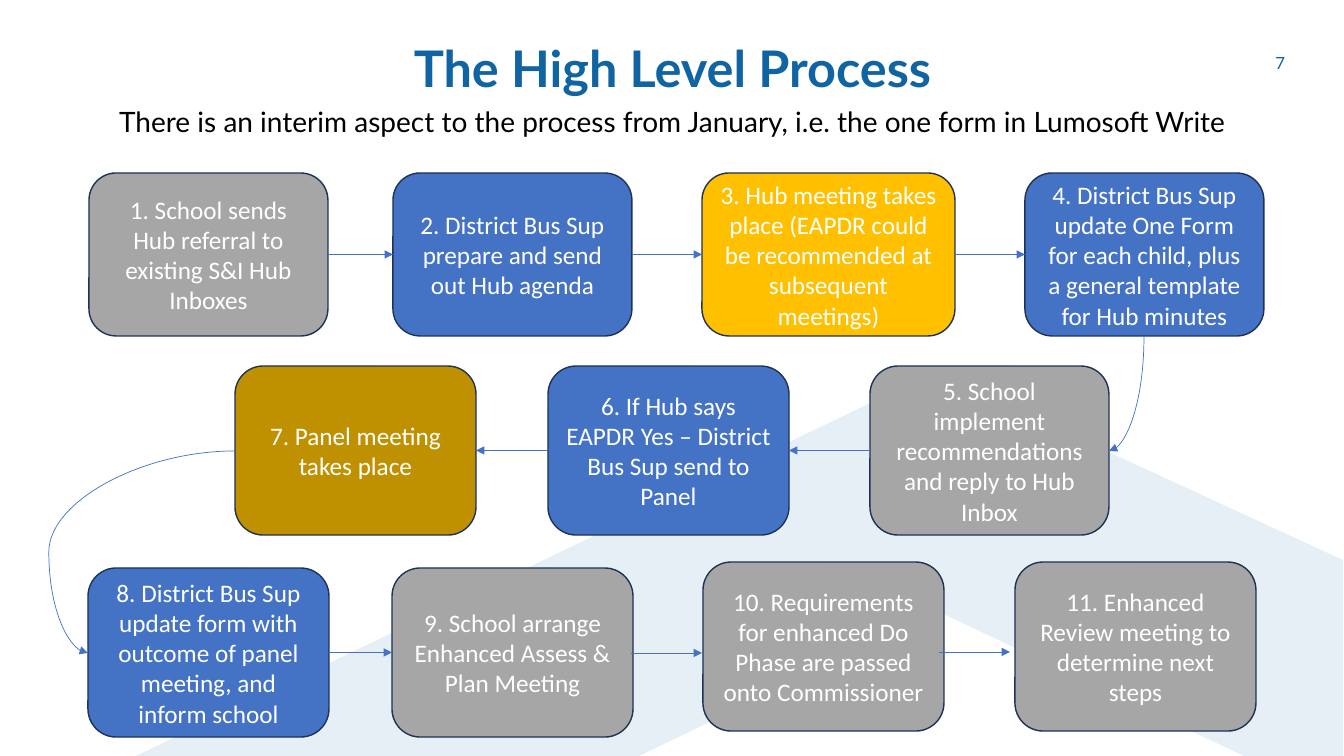
import pptx
import pptx.dml.color
import pptx.enum.shapes
import pptx.enum.text
import pptx.oxml
import pptx.oxml.ns
import pptx.util
from lxml import etree

SCALE = 12192000 / 1344
COLOURS = {
    "heading": "1064A2", "black": "000000", "white": "FFFFFF",
    "school": "A6A6A6", "district": "4472C4", "hub": "FFC000",
    "panel": "BF9000", "outline": "1E3256", "arrow": "4472C4",
}
CONNECTOR = pptx.enum.shapes.MSO_CONNECTOR
ANCHOR = pptx.enum.text.MSO_ANCHOR
ALIGN = pptx.enum.text.PP_ALIGN
qn = pptx.oxml.ns.qn


def px(*lengths):
    return [round(length * SCALE) for length in lengths]


def write(shape, text, size, colour, font="Lato", bold=False, align=ALIGN.CENTER, **frame_format):
    """Fill a shape with one paragraph; frame_format holds text frame attributes."""
    frame = shape.text_frame
    for name, value in ({"word_wrap": True} | frame_format).items():
        setattr(frame, name, value)
    paragraph = frame.paragraphs[0]
    paragraph.text = text
    paragraph.alignment = align
    run_font = paragraph.runs[0].font
    for name, value in {"name": font, "size": pptx.util.Pt(size), "bold": bold}.items():
        setattr(run_font, name, value)
    run_font.color.rgb = pptx.dml.color.RGBColor.from_string(COLOURS[colour])
    return paragraph


deck = pptx.Presentation()
deck.slide_width, deck.slide_height = px(1344, 756)
slide = deck.slides.add_slide(deck.slide_layouts[5])
shapes = slide.shapes

# Pale mountain behind the process
outline = [(639, 756), (136, 756), (935, 372), (1343, 560), (1343, 756), (1244, 756), (939, 612)]
builder = shapes.build_freeform(*outline[0], scale=SCALE)
builder.add_line_segments(outline[1:])
mountain = builder.convert_to_shape()
mountain.shadow.inherit = False
mountain.line.fill.background()
mountain.fill.solid()
mountain.fill.fore_color.rgb = pptx.dml.color.RGBColor.from_string(COLOURS["heading"])
mountain_colour = next(mountain.fill._xPr.iter(qn("a:srgbClr")))
etree.SubElement(mountain_colour, qn("a:alpha"), val="10000")

# Headings and page number
title = shapes.title
title.left, title.top, title.width, title.height = px(93, 40, 1159, 146)
no_autofit = pptx.enum.text.MSO_AUTO_SIZE.NONE
thin = dict.fromkeys(["margin_left", "margin_top", "margin_right", "margin_bottom"], px(4)[0])
write(title, "The High Level Process", 36, "heading", bold=True,
      vertical_anchor=ANCHOR.TOP, auto_size=no_autofit, **thin).line_spacing = 0.9

subtitle = shapes.add_textbox(*px(93, 88, 1159, 51))
write(subtitle, "There is an interim aspect to the process from January, i.e. the one form in Lumosoft Write",
      20, "black", **(dict.fromkeys(thin, 0) | {"word_wrap": False})).line_spacing = pptx.util.Pt(35.6)

page_number = shapes.add_textbox(*px(1249, 43, 46, 40))
write(page_number, "7", 12, "heading", align=ALIGN.RIGHT, vertical_anchor=ANCHOR.MIDDLE)

# Steps: left, top, width, height, owner, text
steps = [
    (89, 173, 239, 163, "school", "School sends Hub referral to existing S&I Hub Inboxes"),
    (393, 173, 239, 163, "district", "District Bus Sup prepare and send out Hub agenda"),
    (702, 173, 253, 163, "hub",
     "Hub meeting takes place (EAPDR could be recommended at subsequent meetings)"),
    (1025, 173, 239, 163, "district",
     "District Bus Sup update One Form for each child, plus a general template for Hub minutes"),
    (870, 366, 239, 169, "school", "School implement recommendations and reply to Hub Inbox"),
    (548, 366, 241, 169, "district", "If Hub says EAPDR Yes – District Bus Sup send to Panel"),
    (235, 366, 241, 169, "panel", "Panel meeting takes place"),
    (88, 568, 241, 169, "district",
     "District Bus Sup update form with outcome of panel meeting, and inform school"),
    (392, 568, 241, 169, "school", "School arrange Enhanced Assess & Plan Meeting"),
    (703, 562, 241, 169, "school",
     "Requirements for enhanced Do Phase are passed onto Commissioner"),
    (1015, 562, 241, 169, "school", "Enhanced Review meeting to determine next steps"),
]
boxes = {}
for number, (left, top, width, height, owner, text) in enumerate(steps, 1):
    box = shapes.add_shape(pptx.enum.shapes.MSO_SHAPE.ROUNDED_RECTANGLE, *px(left, top, width, height))
    box.shadow.inherit = False
    box.fill.solid()
    box.fill.fore_color.rgb = pptx.dml.color.RGBColor.from_string(COLOURS[owner])
    box.line.color.rgb = pptx.dml.color.RGBColor.from_string(COLOURS["outline"])
    box.line.width = pptx.util.Pt(1)
    write(box, f"{number}. {text}", 18, "white", font="Calibri", vertical_anchor=ANCHOR.MIDDLE)
    boxes[number] = box

# Straight arrows between neighbours: sides are 1 left, 3 right
arrows = []
for start, end, start_side, end_side in [
    (1, 2, 3, 1), (2, 3, 3, 1), (3, 4, 3, 1), (5, 6, 1, 3), (6, 7, 1, 3), (8, 9, 3, 1),
]:
    arrow = shapes.add_connector(CONNECTOR.STRAIGHT, 0, 0, 0, 0)
    arrow.begin_connect(boxes[start], start_side)
    arrow.end_connect(boxes[end], end_side)
    arrows.append(arrow)
for start_x, end_x, y in [(631, 702, 653), (939, 1010, 652)]:
    arrows.append(shapes.add_connector(CONNECTOR.STRAIGHT, *px(start_x, y, end_x, y)))

# Curved arrows that carry the flow to the next row
to_second_row = shapes.add_connector(CONNECTOR.CURVE, *px(1069, 376, 1184, 411))
to_second_row._element.spPr.find(qn("a:xfrm")).set("rot", "5400000")
to_second_row._element.spPr.find(qn("a:prstGeom")).set("prst", "curvedConnector2")
to_third_row = shapes.add_connector(CONNECTOR.CURVE, *px(235, 451, 88, 653))
bend = next(to_third_row._element.spPr.iter(qn("a:avLst")))
etree.SubElement(bend, qn("a:gd"), name="adj1", fmla="val 126600")

for arrow in arrows + [to_second_row, to_third_row]:
    arrow.line.color.rgb = pptx.dml.color.RGBColor.from_string(COLOURS["arrow"])
    arrow.line.width = pptx.util.Pt(0.5)
    etree.SubElement(arrow.line._get_or_add_ln(), qn("a:tailEnd"), type="triangle")
    etree.SubElement(arrow._element.spPr, qn("a:effectLst"))

deck.save("out.pptx")
